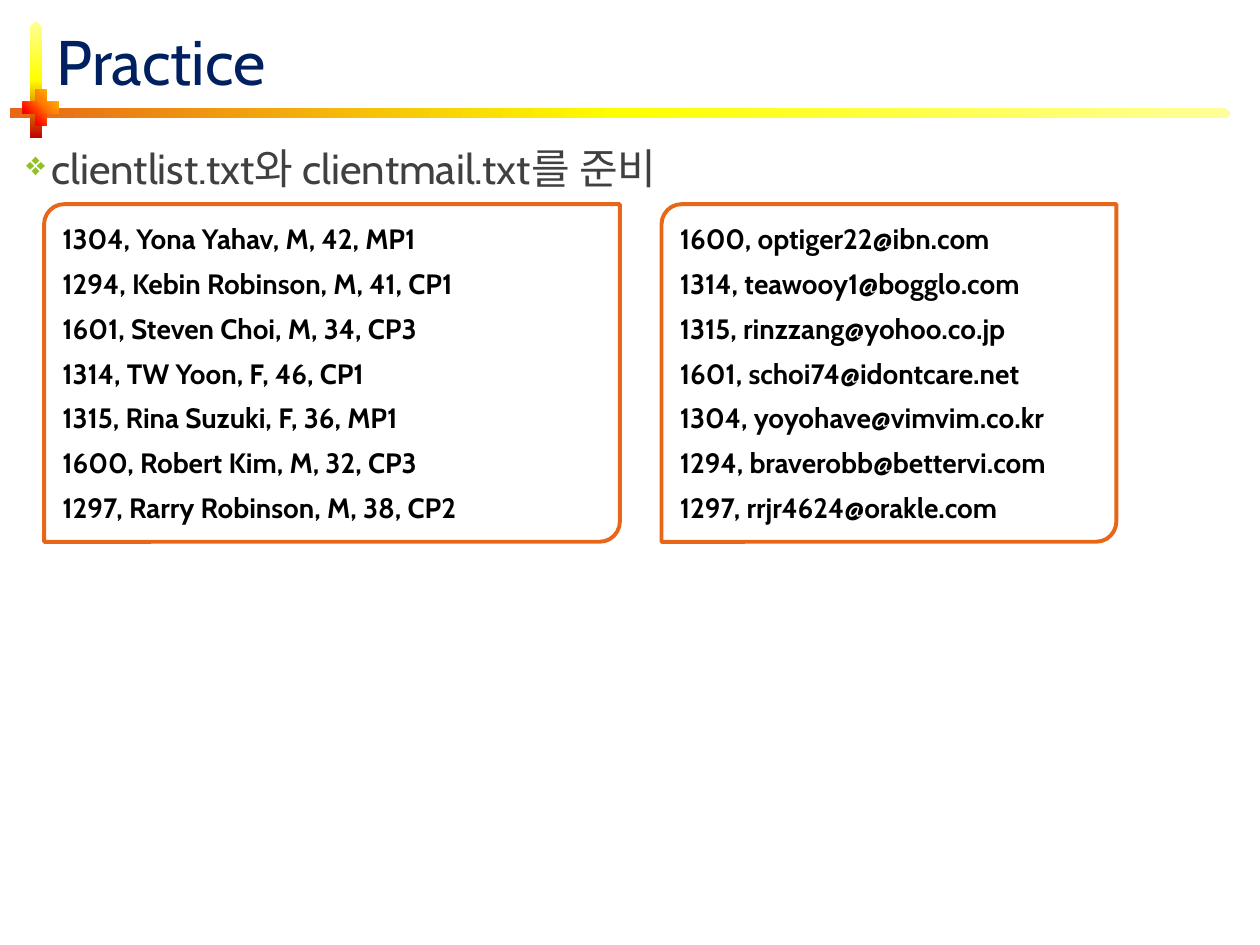
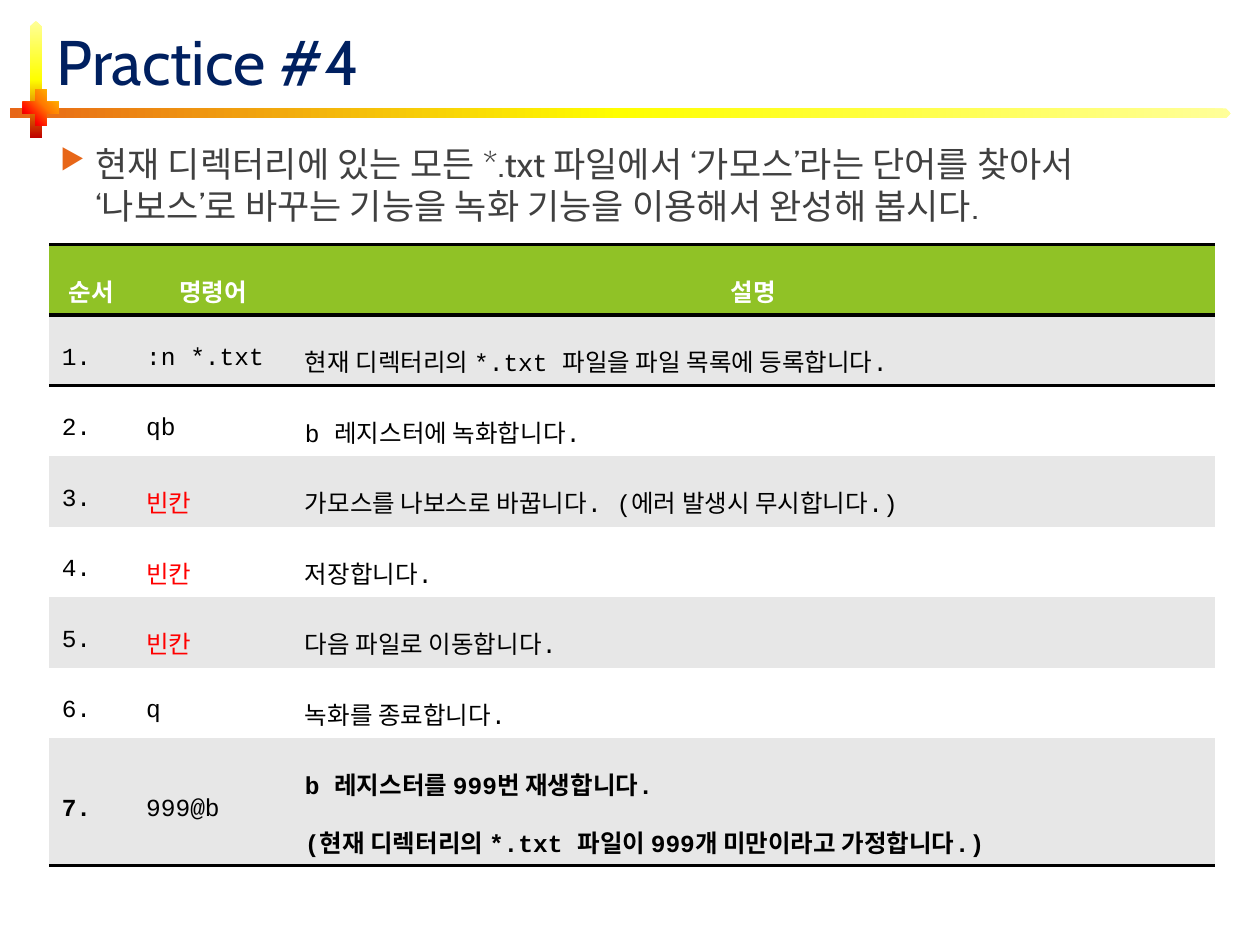
"""Build two practice slides: client data files and a macro recording exercise."""
from lxml import etree
from pptx import Presentation
from pptx.dml.color import RGBColor
from pptx.enum.shapes import MSO_SHAPE
from pptx.enum.text import MSO_ANCHOR, PP_ALIGN
from pptx.oxml.ns import qn
from pptx.util import Inches, Pt

PENTAGON = MSO_SHAPE.PENTAGON
PLUS = MSO_SHAPE.MATH_PLUS
CARD = MSO_SHAPE.ROUND_2_DIAG_RECTANGLE
MIDDLE = MSO_ANCHOR.MIDDLE
LEFT, CENTER = PP_ALIGN.LEFT, PP_ALIGN.CENTER

SANS, MONO = "Cabin", "Courier New"
COLORS = {
    "title": "002060", "body": "404040", "text": "000000", "white": "FFFFFF",
    "green": "90C226", "orange": "E76618", "stripe": "E7E7E7", "blank": "FF0000",
}
BAND_STOPS = [(0, "FFFF99"), (50, "FFFF00"), (100, COLORS["orange"])]
POST_STOPS = BAND_STOPS[:2] + [(100, "C00000")]
PLUS_STOPS = [(0, "FFF200"), (45, "FF7A00"), (70, "FF0300"), (100, "4D0808")]
PLAIN_TABLE = "{2D5ABB26-0587-4C30-8999-92F81FD0307C}"

CLIENTS = [
    "1304, Yona Yahav, M, 42, MP1", "1294, Kebin Robinson, M, 41, CP1",
    "1601, Steven Choi, M, 34, CP3", "1314, TW Yoon, F, 46, CP1",
    "1315, Rina Suzuki, F, 36, MP1", "1600, Robert Kim, M, 32, CP3",
    "1297, Rarry Robinson, M, 38, CP2",
]
MAILS = [
    "1600, optiger22@ibn.com", "1314, teawooy1@bogglo.com",
    "1315, rinzzang@yohoo.co.jp", "1601, schoi74@idontcare.net",
    "1304, yoyohave@vimvim.co.kr", "1294, braverobb@bettervi.com",
    "1297, rrjr4624@orakle.com",
]
BLANK = "빈칸"
STEPS = [
    ("순서", "명령어", "설명"),
    ("1.", ":n *.txt", "현재 디렉터리의 *.txt 파일을 파일 목록에 등록합니다."),
    ("2.", "qb", "b 레지스터에 녹화합니다."),
    ("3.", BLANK, "가모스를 나보스로 바꿉니다. (에러 발생시 무시합니다.)"),
    ("4.", BLANK, "저장합니다."),
    ("5.", BLANK, "다음 파일로 이동합니다."),
    ("6.", "q", "녹화를 종료합니다."),
    ("7.", "999@b", "b 레지스터를 999번 재생합니다.\n"
                    "(현재 디렉터리의 *.txt 파일이 999개 미만이라고 가정합니다.)"),
]


def rgb(name):
    """Return the colour stored under a name."""
    return RGBColor.from_string(COLORS[name])


def add_node(parent, tag, **attributes):
    """Append a drawing element with the given attributes."""
    return etree.SubElement(parent, qn(tag), **attributes)


def write(frame, text, *, size, color, font=SANS, bold=False, align=LEFT,
          before=0, after=0, spacing=None, anchor=None):
    """Fill a text frame with one paragraph per line of text."""
    frame.word_wrap = True
    if anchor is not None:
        frame.vertical_anchor = anchor
    for index, line in enumerate(text.split("\n")):
        para = frame.add_paragraph() if index else frame.paragraphs[0]
        para.alignment = align
        para.space_before, para.space_after = Pt(before), Pt(after)
        if spacing:
            para.line_spacing = spacing
        span = para.add_run()
        span.text = line
        span.font.name, span.font.size, span.font.bold = font, Pt(size), bold
        span.font.color.rgb = rgb(color)
        if font == SANS:
            add_node(span.font._element, "a:ea", typeface=font)


class PracticeDeck:
    """Hold the shared style and the slide being built."""

    def __init__(self):
        """Start an empty deck of 10 by 7.5 inches."""
        self.deck = Presentation()
        self.deck.slide_width, self.deck.slide_height = Inches(10), Inches(7.5)
        self.page = None

    def new_page(self, title):
        """Add a slide with the coloured cross and its title."""
        self.page = self.deck.slides.add_slide(self.deck.slide_layouts[6])
        self.gradient_shape(PENTAGON, (0.08, 0.86, 9.69, 0.08), BAND_STOPS, 180)
        self.gradient_shape(PENTAGON, (-0.18, 0.58, 0.93, 0.1), POST_STOPS, 180, 270)
        self.gradient_shape(PLUS, (0.13, 0.66, 0.39, 0.39), PLUS_STOPS, 135)
        self.text_box(title, (0.35, 0.1, 9.41, 0.76), size=36, color="title",
                      anchor=MIDDLE)

    def shape(self, kind, place):
        """Add a preset shape without shadow."""
        shape = self.page.shapes.add_shape(kind, *map(Inches, place))
        shape.shadow.inherit = False
        return shape

    def gradient_shape(self, kind, place, stops, angle, rotation=0):
        """Add an outline-free shape filled with a linear gradient."""
        shape = self.shape(kind, place)
        shape.rotation = rotation
        shape.line.fill.background()
        shape.fill.background()
        properties = shape._element.spPr
        gradient = etree.Element(qn("a:gradFill"), rotWithShape="1")
        properties.replace(properties.find(qn("a:noFill")), gradient)
        stop_list = add_node(gradient, "a:gsLst")
        for position, color in stops:
            stop = add_node(stop_list, "a:gs", pos=str(position * 1000))
            add_node(stop, "a:srgbClr", val=color)
        add_node(gradient, "a:lin", ang=str(angle * 60000), scaled="0")

    def text_box(self, text, place, **style):
        """Add a text box and return its frame."""
        box = self.page.shapes.add_textbox(*map(Inches, place))
        write(box.text_frame, text, **style)
        return box.text_frame

    def bullet(self, text, mark, mark_color, *, size, margin, indent):
        """Add the bulleted statement under the title."""
        frame = self.text_box(text, (0.11, 1.08, 9.66, 4.8), size=size,
                              color="body", before=10)
        properties = frame.paragraphs[0]._p.get_or_add_pPr()
        properties.set("marL", str(Inches(margin)))
        properties.set("indent", str(Inches(indent)))
        add_node(add_node(properties, "a:buClr"), "a:srgbClr", val=COLORS[mark_color])
        add_node(properties, "a:buSzPct", val="80000")
        add_node(properties, "a:buChar", char=mark)

    def file_card(self, lines, left, width):
        """Add an outlined card that lists the lines of a file."""
        card = self.shape(CARD, (left, 1.62, width, 2.68))
        card.adjustments[0], card.adjustments[1] = 0.06, 0
        card.fill.solid()
        card.fill.fore_color.rgb = rgb("white")
        card.line.color.rgb = rgb("orange")
        card.line.width = Pt(2.25)
        write(card.text_frame, "\n".join(lines), size=16, color="text", bold=True,
              before=3.2, after=3.2, anchor=MIDDLE)

    def cell(self, cell, text, fill, edges, **style):
        """Format one table cell with its ruled edges, fill and text."""
        properties = cell._tc.get_or_add_tcPr()
        for edge in edges:
            line = add_node(properties, edge, w=str(Pt(2)))
            add_node(add_node(line, "a:solidFill"), "a:srgbClr", val=COLORS["text"])
        cell.fill.solid()
        cell.fill.fore_color.rgb = rgb(fill)
        cell.vertical_anchor = MIDDLE
        write(cell.text_frame, text, size=14, font=MONO, spacing=1.6, **style)

    def step_table(self, rows, widths, heights):
        """Add the striped table of commands."""
        table_frame = self.page.shapes.add_table(
            len(rows), len(widths), Inches(0.39), Inches(1.94),
            Inches(sum(widths)), Inches(sum(heights)))
        table = table_frame.table
        table._tbl.tblPr.find(qn("a:tableStyleId")).text = PLAIN_TABLE
        for column, width in zip(table.columns, widths):
            column.width = Inches(width)
        last = len(rows) - 1
        for number, (row, height) in enumerate(zip(rows, heights)):
            table.rows[number].height = Inches(height)
            header = number == 0
            fill = "green" if header else "stripe" if number % 2 else "white"
            edges = {0: ["a:lnT", "a:lnB"], 1: ["a:lnT"], last: ["a:lnB"]}.get(number, [])
            for place, text in enumerate(row):
                color = "white" if header else "blank" if text == BLANK else "text"
                self.cell(table.cell(number, place), text, fill, edges, color=color,
                          bold=header or (number == last and place != 1),
                          align=CENTER if header else LEFT)


def main():
    """Build both slides and save the deck."""
    practice = PracticeDeck()

    practice.new_page("Practice")
    practice.bullet("clientlist.txt와 clientmail.txt를 준비", "❖", "green",
                    size=24, margin=0.2, indent=-0.38)
    practice.file_card(CLIENTS, 0.35, 4.57)
    practice.file_card(MAILS, 5.25, 3.61)

    practice.new_page("Practice #4")
    practice.bullet("현재 디렉터리에 있는 모든 *.txt 파일에서 ‘가모스’라는 단어를 찾아서 "
                    "‘나보스’로 바꾸는 기능을 녹화 기능을 이용해서 완성해 봅시다.",
                    "▶", "orange", size=20, margin=0.55, indent=-0.28)
    practice.step_table(STEPS, [0.67, 1.26, 7.32], [0.56] * 7 + [1.01])

    practice.deck.save("out.pptx")


if __name__ == "__main__":
    main()
